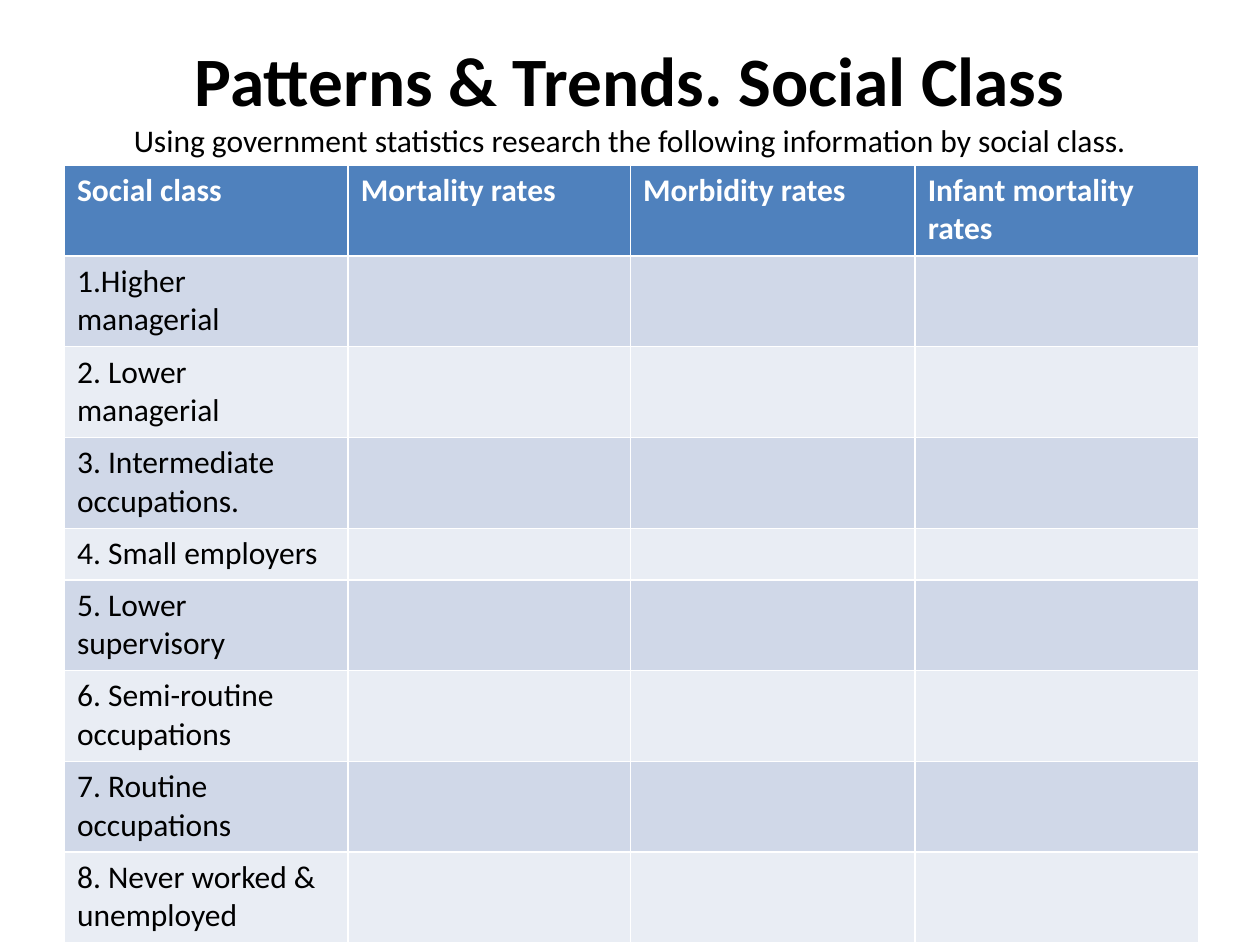
"""Build a slide with a research table of health patterns by social class."""
from pptx import Presentation
from pptx.dml.color import RGBColor
from pptx.enum.text import MSO_ANCHOR, PP_ALIGN
from pptx.util import Cm, Pt

BOTTOM = MSO_ANCHOR.BOTTOM
CENTER = PP_ALIGN.CENTER
BLANK_LAYOUT = 6

HEADERS = ["Social class", "Mortality rates", "Morbidity rates", "Infant mortality rates"]
CLASSES = [
    "1.Higher\nmanagerial",
    "2. Lower\nmanagerial",
    "3. Intermediate occupations.",
    "4. Small employers",
    "5. Lower supervisory",
    "6. Semi-routine occupations",
    "7. Routine occupations",
    "8. Never worked & unemployed",
]
COLUMN_WIDTHS = [5.72, 5.69, 5.74, 5.72]
ROW_HEIGHTS = [1.83] * 4 + [1.04] + [1.83] * 4
HEADER_FILL = "4F81BD"
BAND_FILLS = ["D0D8E8", "E9EDF4"]
TITLE_FORMAT = {"size": Pt(39.6), "bold": True}
BODY_FORMAT = {"size": Pt(18), "bold": False}
HEADER_FORMAT = {"size": Pt(18), "bold": True}


def color(hex_value):
    return RGBColor.from_string(hex_value)


class SlideBuilder:
    def __init__(self, slide, font_name="Calibri"):
        self.slide = slide
        self.font_name = font_name

    def style(self, font, values, hex_value="000000"):
        for name, value in {"name": self.font_name, **values}.items():
            setattr(font, name, value)
        font.color.rgb = color(hex_value)

    def heading(self, left, top, width, height, lines):
        shape = self.slide.shapes.add_textbox(Cm(left), Cm(top), Cm(width), Cm(height))
        frame = shape.text_frame
        frame.word_wrap = True
        frame.vertical_anchor = BOTTOM
        paragraph = frame.paragraphs[0]
        paragraph.alignment = CENTER
        for index, (text, values) in enumerate(lines):
            if index:
                paragraph.add_line_break()
            run = paragraph.add_run()
            run.text = text
            self.style(run.font, values)

    def cell(self, cell, text, fill, values, hex_value):
        cell.fill.solid()
        cell.fill.fore_color.rgb = color(fill)
        cell.text = text
        for paragraph in cell.text_frame.paragraphs:
            self.style(paragraph.font, values, hex_value)
            for run in paragraph.runs:
                self.style(run.font, values, hex_value)

    def table(self, left, top, headers, labels, widths, heights):
        table = self.slide.shapes.add_table(
            len(heights), len(widths), Cm(left), Cm(top), Cm(sum(widths)), Cm(sum(heights))
        ).table
        for column, width in zip(table.columns, widths):
            column.width = Cm(width)
        for row, height in zip(table.rows, heights):
            row.height = Cm(height)
        for index, text in enumerate(headers):
            self.cell(table.cell(0, index), text, HEADER_FILL, HEADER_FORMAT, "FFFFFF")
        for row_index, label in enumerate(labels):
            fill = BAND_FILLS[row_index % 2]
            for index in range(len(widths)):
                text = "" if index else label
                self.cell(table.cell(row_index + 1, index), text, fill, BODY_FORMAT, "000000")


def main():
    presentation = Presentation()
    presentation.slide_width = Cm(25.4)
    presentation.slide_height = Cm(19.05)
    slide = presentation.slides.add_slide(presentation.slide_layouts[BLANK_LAYOUT])
    builder = SlideBuilder(slide)
    builder.heading(1.27, 2.13, 22.86, 1.19, [
        ("Patterns & Trends. Social Class", TITLE_FORMAT),
        ("Using government statistics research the following information by social class.",
         BODY_FORMAT),
    ])
    builder.table(1.3, 3.33, HEADERS, CLASSES, COLUMN_WIDTHS, ROW_HEIGHTS)
    presentation.save("out.pptx")


if __name__ == "__main__":
    main()
